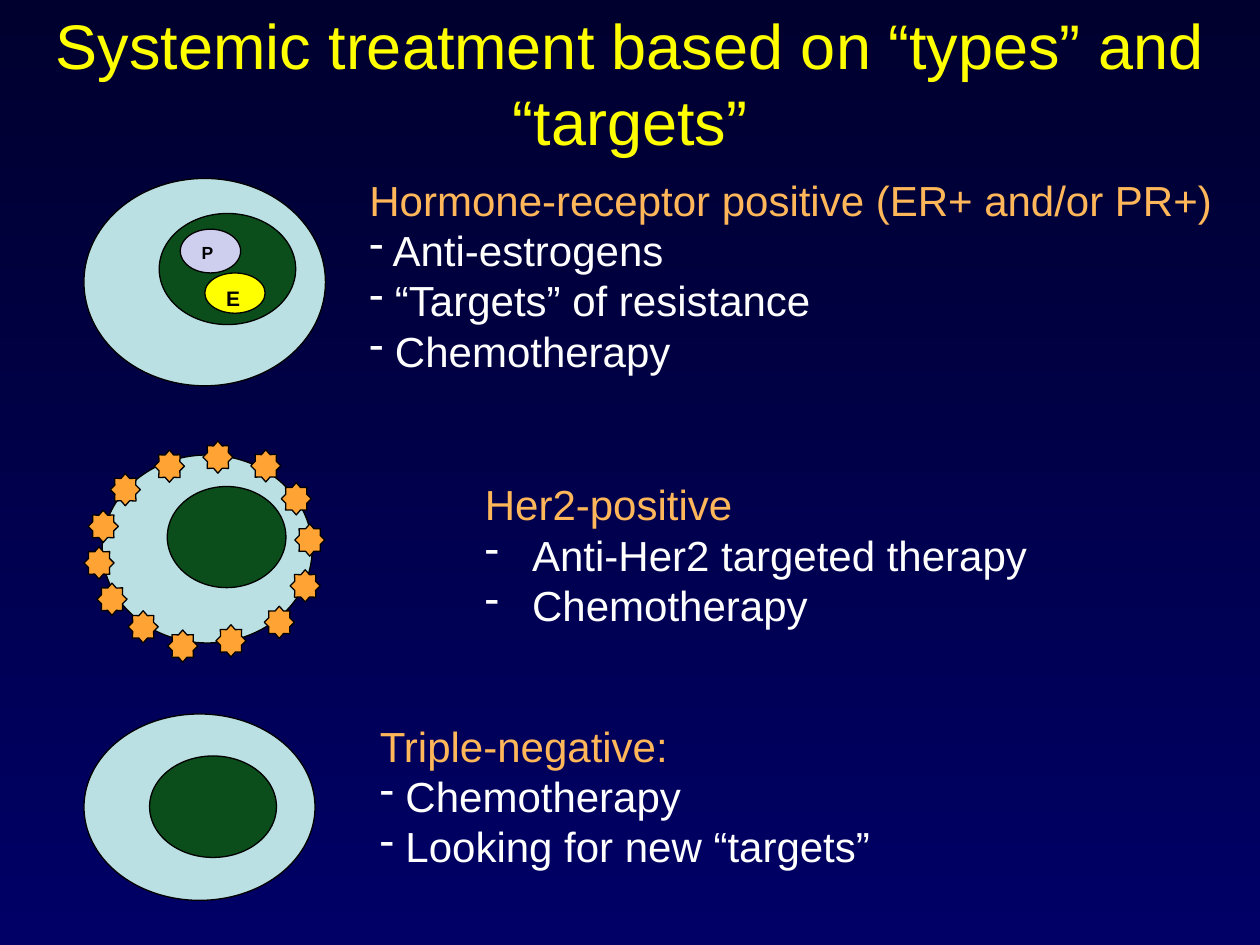
import pptx
import pptx.util
import pptx.dml.color
import pptx.enum.shapes
import pptx.enum.text
import pptx.oxml
import pptx.oxml.ns
from dataclasses import dataclass

Pt = pptx.util.Pt
Kind = pptx.enum.shapes.MSO_SHAPE


@dataclass(frozen=True)
class Theme:
    font: str = "Arial"
    top: str = "00002F"
    base: str = "000066"
    title: str = "FFFF00"
    head: str = "FFB759"
    body: str = "FFFFFF"
    ink: str = "000000"
    cell: str = "BBE0E3"
    core: str = "0C4E1B"
    star: str = "FFA434"
    estro: str = "FFFF00"
    proge: str = "CECEEF"
    big: int = 36
    mid: int = 24
    line: float = 0.75


theme = Theme()

# Boxes are left, top, width, height in points.
TITLE = ("Systemic treatment based on “types” and “targets”", (6, 2, 708, 90))

# Box, hanging indent, heading, items
NOTES = [
    ((270, 270, 474, 124), 27, "Her2-positive",
     ["Anti-Her2 targeted therapy", "Chemotherapy"]),
    ((204, 96, 498, 124), 0, "Hormone-receptor positive (ER+ and/or PR+)",
     [" Anti-estrogens", " “Targets” of resistance", " Chemotherapy"]),
    ((210, 408, 480, 94), 0, "Triple-negative:",
     [" Chemotherapy", " Looking for new “targets”"]),
]

# Outer cell, nucleus
CELLS = {
    "her2": ((58.4, 260, 120, 107.4), (95.6, 278, 67.8, 57.8)),
    "triple": ((48, 408, 132, 106.5), (85.5, 432, 72.5, 58)),
    "hormone": ((48, 102, 138, 118.5), (91, 122, 78, 63.5)),
}

# Letter, size, fill, box
MARKS = [
    ("E", 12, theme.estro, (117, 156, 34.5, 23)),
    ("P", 10, theme.proge, (103, 131, 34.5, 25)),
]

# Top left corners of the surface receptors, clockwise from the top
STAR = (17.2, 18.4)
STARS = [
    (115.9, 252), (143.3, 257), (160.7, 275.8), (168.4, 299.4), (165.8, 325.6),
    (151, 346.4), (123.4, 357), (95.8, 360), (73.2, 349), (55.4, 333.2),
    (48, 312.5), (50.4, 291.6), (63, 270.6), (88.2, 257.2),
]


def tint(code):
    return pptx.dml.color.RGBColor.from_string(code)


def style(para, size, color, bold=False):
    font = para.font
    font.name, font.size, font.bold = theme.font, Pt(size), bold
    font.color.rgb = tint(color)


def draw(group, kind, box, fill):
    shape = group.shapes.add_shape(kind, *map(Pt, box))
    shape.shadow.inherit = False
    shape.fill.solid()
    shape.fill.fore_color.rgb = tint(fill)
    shape.line.color.rgb = tint(theme.ink)
    shape.line.width = Pt(theme.line)
    return shape


def frame(slide, box):
    text = slide.shapes.add_textbox(*map(Pt, box)).text_frame
    text.word_wrap = True
    return text


def dash(para, hang):
    """Give the paragraph a hyphen bullet with a hanging indent."""
    props = para._p.get_or_add_pPr()
    props.set("marL", str(Pt(hang)))
    props.set("indent", str(-Pt(hang)))
    mark = pptx.oxml.parse_xml(
        '<a:buChar %s char="-"/>' % pptx.oxml.ns.nsdecls("a"))
    props.insert_element_before(mark, "a:tabLst", "a:defRPr", "a:extLst")


def label(shape, letter, size):
    text = shape.text_frame
    text.vertical_anchor = pptx.enum.text.MSO_ANCHOR.TOP
    para = text.paragraphs[0]
    para.text = letter
    para.alignment = pptx.enum.text.PP_ALIGN.LEFT
    style(para, size, theme.ink, True)


def paint(slide):
    fill = slide.background.fill
    fill.gradient()
    fill.gradient_angle = 270
    for stop, color in zip(fill.gradient_stops, (theme.top, theme.base)):
        stop.color.rgb = tint(color)


def main():
    deck = pptx.Presentation()
    deck.slide_width, deck.slide_height = Pt(720), Pt(540)
    slide = deck.slides.add_slide(deck.slide_layouts[6])
    paint(slide)

    groups = {}
    for name, (outer, core) in CELLS.items():
        group = groups[name] = slide.shapes.add_group_shape()
        draw(group, Kind.OVAL, outer, theme.cell)
        draw(group, Kind.OVAL, core, theme.core)
    for spot in STARS:
        star = draw(groups["her2"], Kind.STAR_8_POINT, spot + STAR, theme.star)
        star.adjustments[0] = 0.375
    for letter, size, fill, box in MARKS:
        label(draw(groups["hormone"], Kind.OVAL, box, fill), letter, size)

    words, box = TITLE
    text = frame(slide, box)
    text.vertical_anchor = pptx.enum.text.MSO_ANCHOR.MIDDLE
    para = text.paragraphs[0]
    para.text = words
    para.alignment = pptx.enum.text.PP_ALIGN.CENTER
    style(para, theme.big, theme.title)

    for box, hang, head, items in NOTES:
        text = frame(slide, box)
        text.paragraphs[0].text = head
        style(text.paragraphs[0], theme.mid, theme.head)
        for item in items:
            para = text.add_paragraph()
            para.text = item
            style(para, theme.mid, theme.body)
            dash(para, hang)

    deck.save("out.pptx")


if __name__ == "__main__":
    main()
